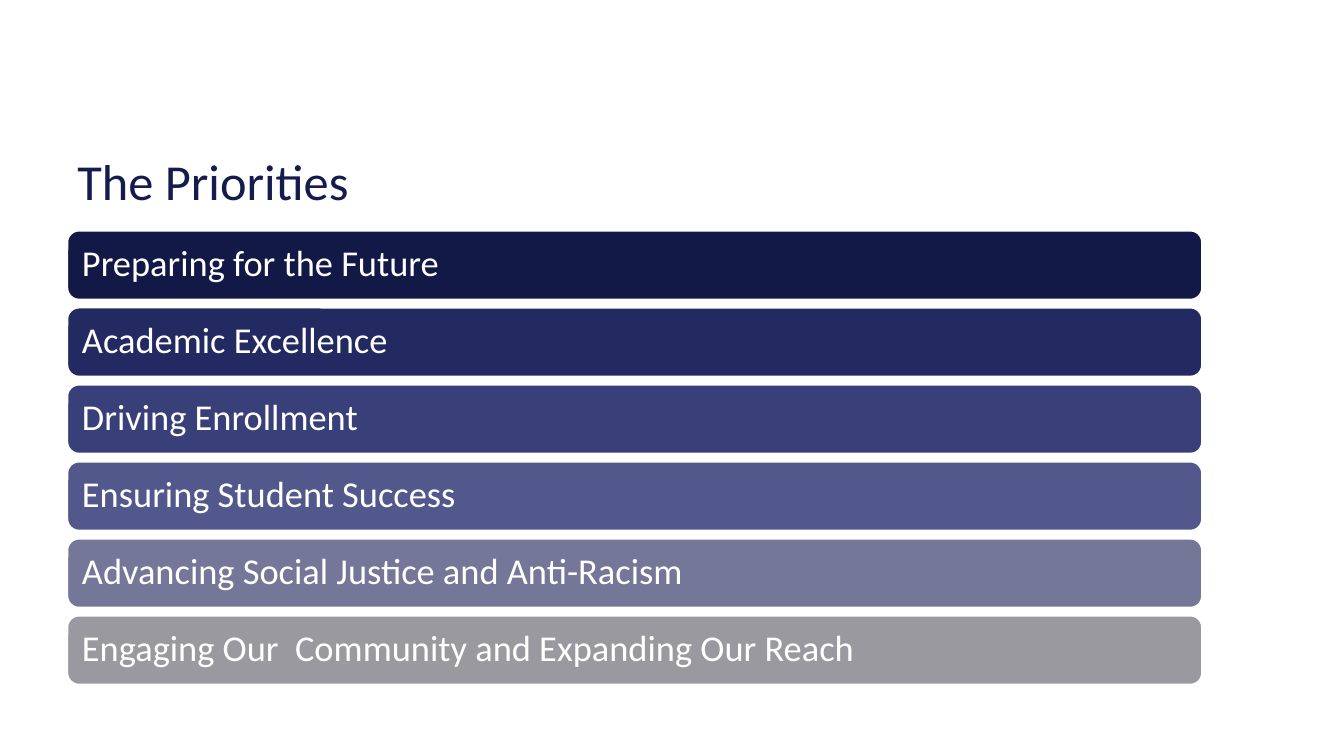
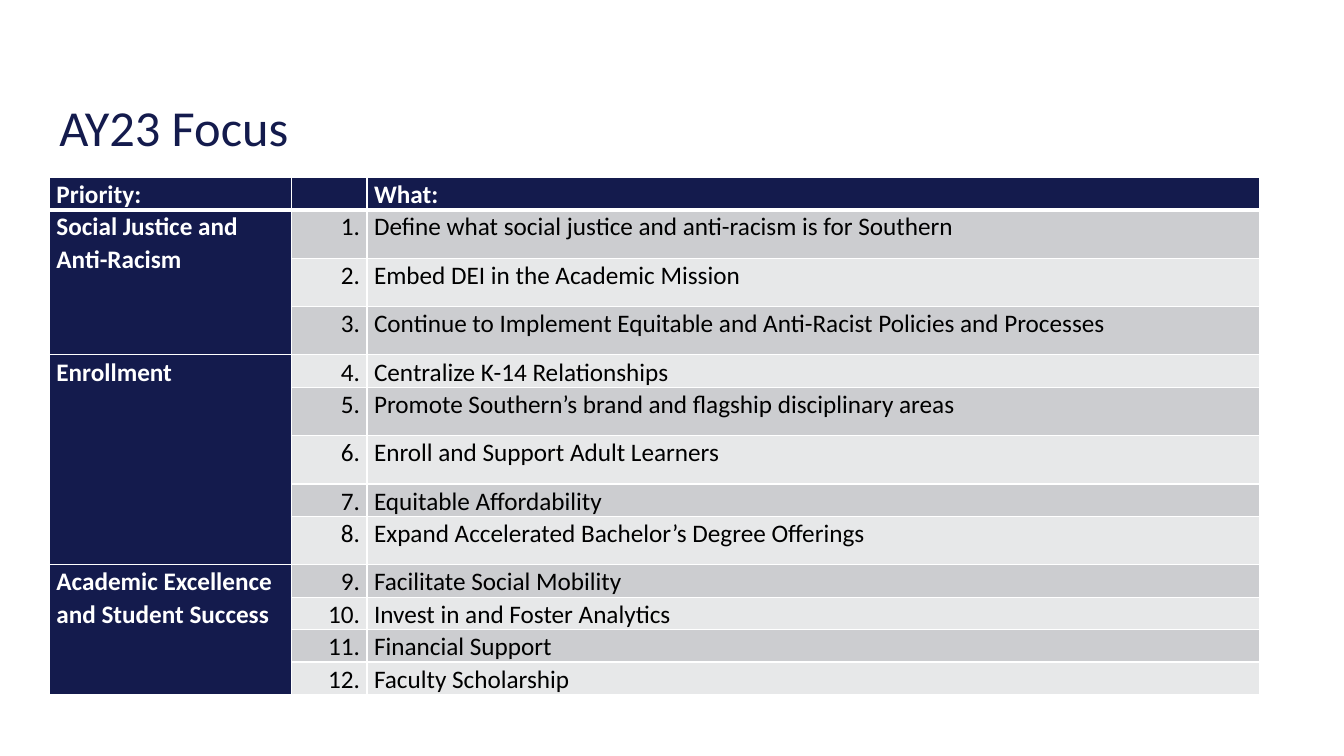
from lxml.etree import SubElement
from pptx import Presentation
from pptx.dml.color import RGBColor
from pptx.enum.shapes import MSO_SHAPE
from pptx.enum.text import MSO_ANCHOR, PP_ALIGN
from pptx.oxml.ns import qn
from pptx.util import Inches, Pt

# Shared style
FONT = "Calibri"
NAVY = RGBColor(0x14, 0x1B, 0x4D)
WHITE = RGBColor(0xFF, 0xFF, 0xFF)
BLACK = RGBColor(0x00, 0x00, 0x00)
DARK_BAND = RGBColor(0xCC, 0xCD, 0xD0)
LIGHT_BAND = RGBColor(0xE7, 0xE8, 0xE9)

# Priorities, each with its bar colour
PRIORITIES = [
    ("Preparing for the Future", RGBColor(0x12, 0x19, 0x46)),
    ("Academic Excellence", RGBColor(0x23, 0x2A, 0x62)),
    ("Driving Enrollment", RGBColor(0x38, 0x3F, 0x79)),
    ("Ensuring Student Success", RGBColor(0x53, 0x58, 0x8C)),
    ("Advancing Social Justice and Anti-Racism", RGBColor(0x74, 0x77, 0x97)),
    ("Engaging Our  Community and Expanding Our Reach", RGBColor(0x99, 0x99, 0x9F)),
]
FIRST_BAR_TOP, LAST_BAR_TOP = 2.29, 6.11

# Focus items, each with its row height
SHORT, TALL = 0.31, 0.48
FOCUS = [
    ("Social Justice and Anti-Racism", [
        ("Define what social justice and anti-racism is for Southern", TALL),
        ("Embed DEI in the Academic Mission", TALL),
        ("Continue to Implement Equitable and Anti-Racist Policies and Processes", TALL),
    ]),
    ("Enrollment", [
        ("Centralize K-14 Relationships", SHORT),
        ("Promote Southern’s brand and flagship disciplinary areas", TALL),
        ("Enroll and Support Adult Learners", TALL),
        ("Equitable Affordability", SHORT),
        ("Expand Accelerated Bachelor’s Degree Offerings", TALL),
    ]),
    ("Academic Excellence and Student Success", [
        ("Facilitate Social Mobility", SHORT),
        ("Invest in and Foster Analytics", SHORT),
        ("Financial Support", SHORT),
        ("Faculty Scholarship", SHORT),
    ]),
]
COLUMN_WIDTHS = [2.4, 0.75, 8.85]


def write_text(text_frame, text, size=18, color=BLACK, bold=False,
               align=PP_ALIGN.LEFT, line_spacing=1.0):
    paragraph = text_frame.paragraphs[0]
    paragraph.text = text
    paragraph.alignment = align
    paragraph.line_spacing = line_spacing
    font = paragraph.font
    font.name, font.size, font.bold = FONT, Pt(size), bold
    font.color.rgb = color


def add_title(slide, text, left, top):
    box = slide.shapes.add_textbox(Inches(left), Inches(top), Inches(12), Inches(1.17))
    box.text_frame.word_wrap = True
    box.text_frame.vertical_anchor = MSO_ANCHOR.BOTTOM
    write_text(box.text_frame, text, size=36, color=NAVY, line_spacing=0.8)


def add_bar(slide, text, top, color):
    bar = slide.shapes.add_shape(MSO_SHAPE.ROUNDED_RECTANGLE, Inches(0.67),
                                 Inches(top), Inches(11.25), Inches(0.68))
    bar.shadow.inherit = False
    bar.fill.solid()
    bar.fill.fore_color.rgb = color
    bar.line.color.rgb = WHITE
    bar.line.width = Pt(1)
    frame = bar.text_frame
    frame.word_wrap = True
    frame.vertical_anchor = MSO_ANCHOR.MIDDLE
    frame.margin_left = frame.margin_right = Inches(0.11)
    write_text(frame, text, size=26, color=WHITE, line_spacing=0.9)


def add_borders(cell, top=1, bottom=1):
    properties = cell._tc.get_or_add_tcPr()
    for side, width in (("L", 1), ("R", 1), ("T", top), ("B", bottom)):
        line = SubElement(properties, qn(f"a:ln{side}"), w=str(Pt(width)))
        fill = SubElement(line, qn("a:solidFill"))
        SubElement(fill, qn("a:srgbClr"), val=str(WHITE))


def fill_cell(cell, text, fill, **text_format):
    cell.fill.solid()
    cell.fill.fore_color.rgb = fill
    write_text(cell.text_frame, text, line_spacing=1.07, **text_format)


def add_focus_table(slide, left, top):
    heights = [SHORT] + [height for _, items in FOCUS for _, height in items]
    frame = slide.shapes.add_table(len(heights), len(COLUMN_WIDTHS), Inches(left), Inches(top),
                                   Inches(sum(COLUMN_WIDTHS)), Inches(sum(heights)))
    table = frame.table
    table.horz_banding = False
    for column, width in zip(table.columns, COLUMN_WIDTHS):
        column.width = Inches(width)

    # Margins and borders; a thick rule lies below the header
    for index, (row, height) in enumerate(zip(table.rows, heights)):
        row.height = Inches(height)
        for cell in row.cells:
            cell.margin_left = cell.margin_right = Inches(0.07)
            cell.margin_top = cell.margin_bottom = 0
            add_borders(cell, top=3 if index == 1 else 1, bottom=3 if index == 0 else 1)

    # Header
    for column, heading in enumerate(["Priority:", "", "What:"]):
        fill_cell(table.cell(0, column), heading, NAVY, color=WHITE, bold=True)

    # Priorities and their numbered items
    number = 1
    for priority, items in FOCUS:
        priority_cell = table.cell(number, 0)
        priority_cell.merge(table.cell(number + len(items) - 1, 0))
        fill_cell(priority_cell, priority, NAVY, color=WHITE, bold=True)
        for item, _ in items:
            band = DARK_BAND if number % 2 else LIGHT_BAND
            fill_cell(table.cell(number, 1), f"{number}.", band, align=PP_ALIGN.RIGHT)
            fill_cell(table.cell(number, 2), item, band)
            number += 1


def add_priorities_slide(presentation):
    slide = presentation.slides.add_slide(presentation.slide_layouts[6])
    add_title(slide, "The Priorities", 0.67, 0.96)
    step = (LAST_BAR_TOP - FIRST_BAR_TOP) / (len(PRIORITIES) - 1)
    for index, (priority, color) in enumerate(PRIORITIES):
        add_bar(slide, priority, FIRST_BAR_TOP + index * step, color)


def add_focus_slide(presentation):
    slide = presentation.slides.add_slide(presentation.slide_layouts[6])
    add_title(slide, "AY23 Focus", 0.49, 0.43)
    add_focus_table(slide, 0.49, 1.76)


def main():
    presentation = Presentation()
    presentation.slide_width = Inches(13.33)
    presentation.slide_height = Inches(7.5)
    add_priorities_slide(presentation)
    add_focus_slide(presentation)
    presentation.save("out.pptx")


if __name__ == "__main__":
    main()
